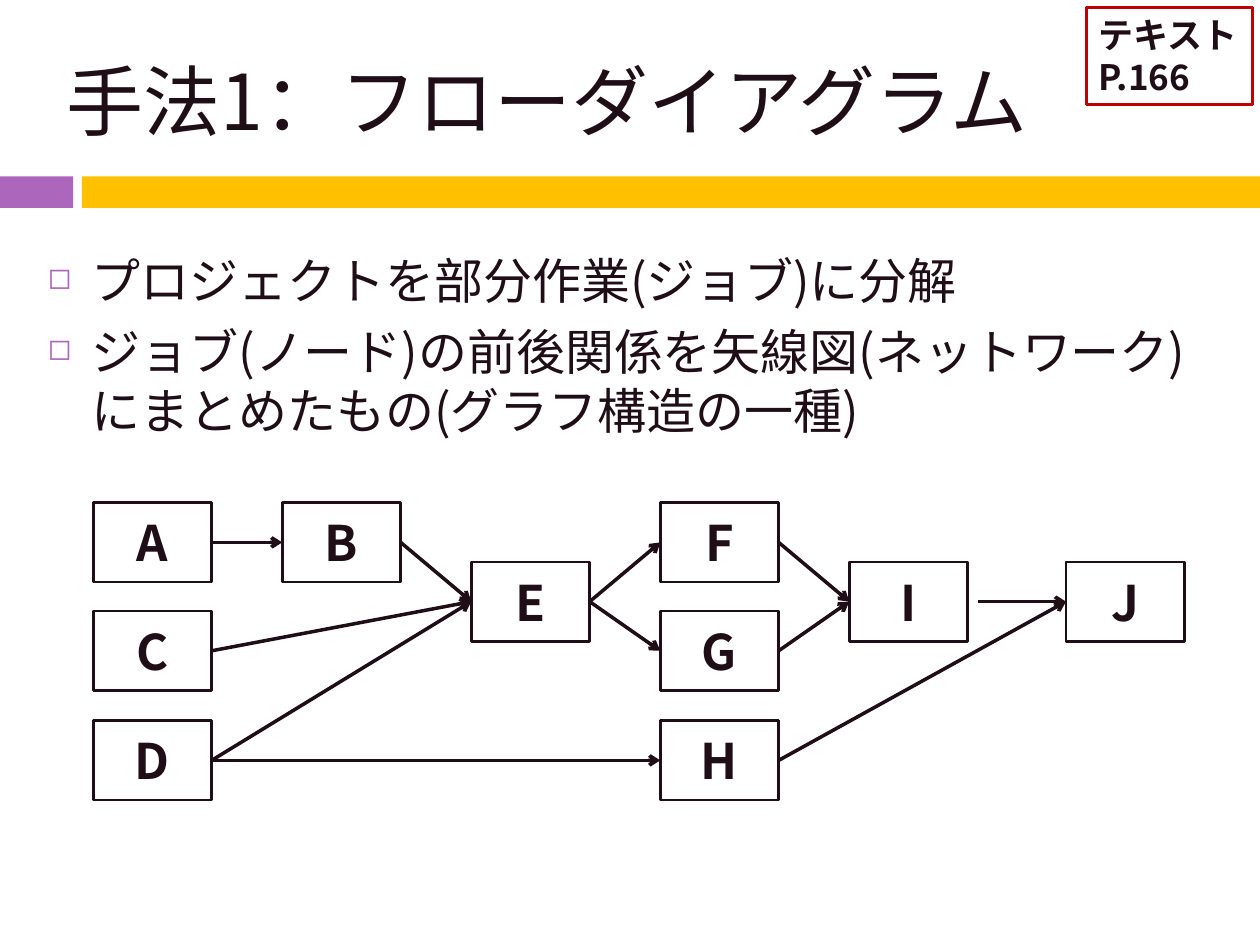
from lxml import etree
from pptx import Presentation
from pptx.dml.color import RGBColor
from pptx.enum.shapes import MSO_CONNECTOR, MSO_SHAPE
from pptx.enum.text import MSO_ANCHOR, PP_ALIGN
from pptx.oxml.ns import qn
from pptx.util import Inches, Pt

RECTANGLE = MSO_SHAPE.RECTANGLE
STRAIGHT = MSO_CONNECTOR.STRAIGHT
MIDDLE, TOP = MSO_ANCHOR.MIDDLE, MSO_ANCHOR.TOP
LEFT, CENTER = PP_ALIGN.LEFT, PP_ALIGN.CENTER
RIGHT_SIDE, LEFT_SIDE = 3, 1

FONT = "Noto Sans CJK JP"
COLORS = {"ink": "200E17", "purple": "AC66BB", "gold": "FFC000", "red": "C00000"}

JOB_WIDTH, JOB_HEIGHT = 0.94, 0.63
COLUMNS = [0.74 + 1.5 * index for index in range(5)] + [8.46]
ROWS = {"top": 3.99, "between": 4.46, "middle": 4.85, "bottom": 5.72}
JOBS = {
    "A": (0, "top"), "C": (0, "middle"), "D": (0, "bottom"),
    "B": (1, "top"), "E": (2, "between"),
    "F": (3, "top"), "G": (3, "middle"), "H": (3, "bottom"),
    "I": (4, "between"), "J": (5, "between"),
}
LINKS = ["AB", "BE", "CE", "DE", "DH", "EF", "EG", "FI", "GI", "HJ"]


def color(name):
    return RGBColor.from_string(COLORS[name])


def write_text(frame, text, size=28, bold=False, align=LEFT, anchor=TOP, wrap=True):
    frame.text = text
    frame.word_wrap = wrap
    frame.vertical_anchor = anchor
    for paragraph in frame.paragraphs:
        paragraph.alignment = align
        for run in paragraph.runs:
            run.font.size = Pt(size)
            run.font.bold = bold
            run.font.name = FONT
            run.font.color.rgb = color("ink")
            etree.SubElement(run.font._element, qn("a:ea"), typeface=FONT)


class SlideBuilder:
    def __init__(self, presentation):
        self.slide = presentation.slides.add_slide(presentation.slide_layouts[5])

    def title(self, text, *box):
        title = self.slide.shapes.title
        title.left, title.top, title.width, title.height = map(Inches, box)
        write_text(title.text_frame, text, size=44, anchor=MIDDLE)

    def rectangle(self, *box, fill=None, line=None, line_width=1.5):
        shape = self.slide.shapes.add_shape(RECTANGLE, *map(Inches, box))
        shape.shadow.inherit = False
        if fill:
            shape.fill.solid()
            shape.fill.fore_color.rgb = color(fill)
        else:
            shape.fill.background()
        if line:
            shape.line.color.rgb = color(line)
            shape.line.width = Pt(line_width)
        else:
            shape.line.fill.background()
        return shape

    def bullets(self, items, *box):
        shape = self.slide.shapes.add_textbox(*map(Inches, box))
        write_text(shape.text_frame, "\n".join(items))
        for paragraph in shape.text_frame.paragraphs:
            paragraph.space_before = Pt(7)
            properties = paragraph._p.get_or_add_pPr()
            properties.set("marL", str(Inches(0.35)))
            properties.set("indent", str(-Inches(0.35)))
            bullet_color = etree.SubElement(properties, qn("a:buClr"))
            etree.SubElement(bullet_color, qn("a:srgbClr"), val=COLORS["purple"])
            etree.SubElement(properties, qn("a:buSzPct"), val="60000")
            etree.SubElement(properties, qn("a:buChar"), char="◻")

    def job(self, name, column, row):
        shape = self.rectangle(COLUMNS[column], ROWS[row], JOB_WIDTH, JOB_HEIGHT, line="ink")
        write_text(shape.text_frame, name, bold=True, align=CENTER, anchor=MIDDLE)
        return shape

    def arrow(self, start=(0, 0), end=(0, 0), source=None, target=None):
        connector = self.slide.shapes.add_connector(STRAIGHT, *map(Inches, (*start, *end)))
        if source is not None:
            connector.begin_connect(source, RIGHT_SIDE)
        if target is not None:
            connector.end_connect(target, LEFT_SIDE)
        connector.line.color.rgb = color("ink")
        connector.line.width = Pt(2)
        etree.SubElement(connector.line._get_or_add_ln(), qn("a:tailEnd"), type="arrow")
        etree.SubElement(connector._element.spPr, qn("a:effectLst"))


def main():
    presentation = Presentation()
    presentation.slide_width, presentation.slide_height = Inches(10), Inches(7.5)
    builder = SlideBuilder(presentation)

    # Title and its band
    builder.rectangle(0, 1.4, 0.58, 0.25, fill="purple")
    builder.rectangle(0.65, 1.4, 9.35, 0.25, fill="gold")
    builder.title("手法1：フローダイアグラム", 0.43, 0.25, 8.92, 1.08)

    # Explanation
    builder.bullets([
        "プロジェクトを部分作業(ジョブ)に分解",
        "ジョブ(ノード)の前後関係を矢線図(ネットワーク)にまとめたもの(グラフ構造の一種)",
    ], 0.28, 1.94, 9.45, 4.92)

    # Flow diagram
    jobs = {name: builder.job(name, *place) for name, place in JOBS.items()}
    for source, target in LINKS:
        builder.arrow(source=jobs[source], target=jobs[target])
    middle = ROWS["between"] + JOB_HEIGHT / 2
    builder.arrow(start=(7.76, middle), end=(COLUMNS[5], middle), target=jobs["J"])

    # Textbook page reference
    reference = builder.rectangle(8.62, 0.06, 1.32, 0.77, line="red", line_width=1.75)
    write_text(reference.text_frame, "テキスト\nP.166", size=20, bold=True, wrap=False)

    presentation.save("out.pptx")


if __name__ == "__main__":
    main()
